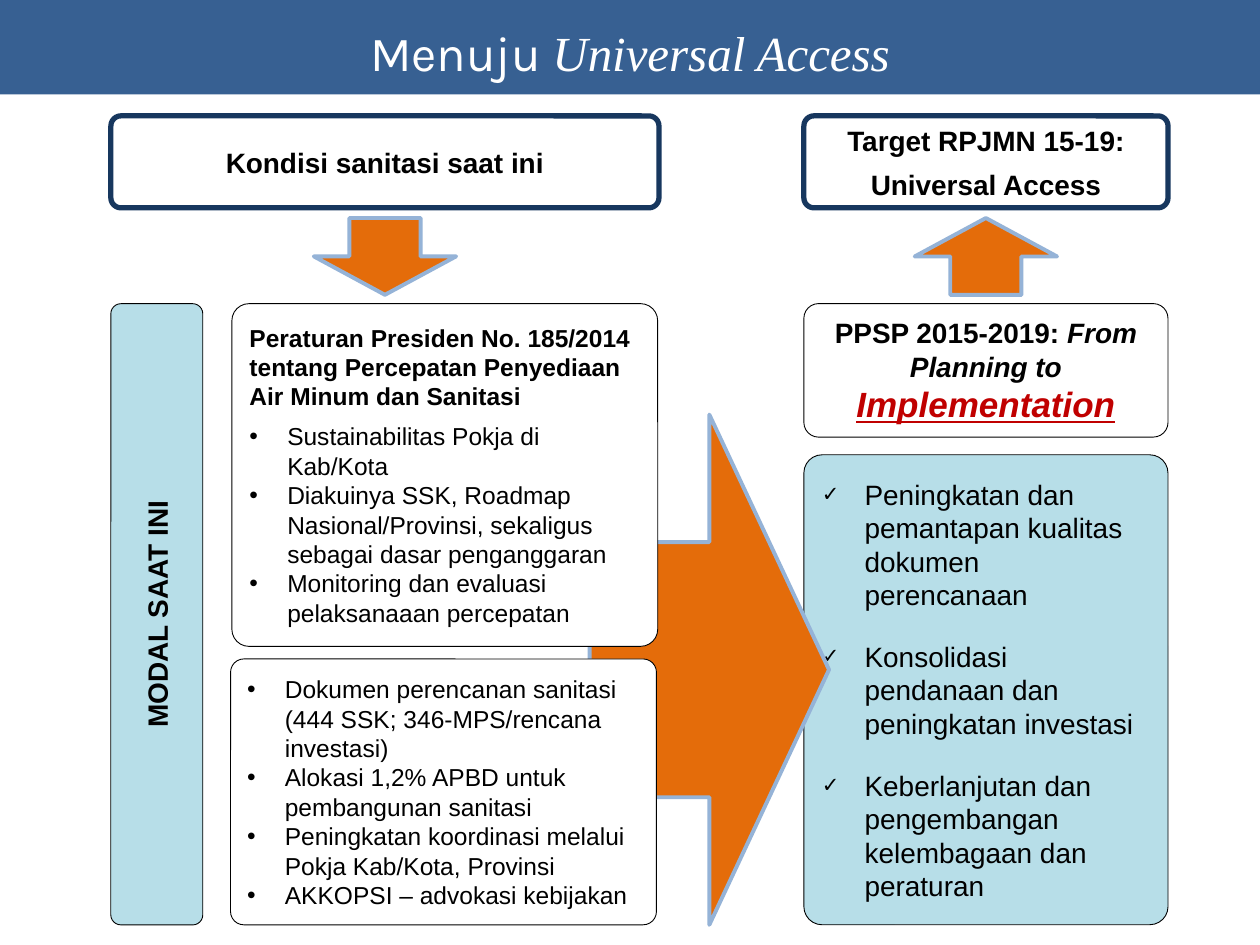
from lxml import etree
from pptx import Presentation
from pptx import util as u
from pptx.dml.color import RGBColor
from pptx.enum import shapes, text
from pptx.oxml import ns, parse_xml

COLORS = {
    "white": "FFFFFF", "black": "000000", "band": "376092", "navy": "17375E",
    "pale": "B7DEE8", "orange": "E46C0A", "edge": "95B3D7", "red": "C00000",
}
RIGHT_LEFT, RIGHT_WIDTH = 6.38, 2.89
HEADER_TOP, HEADER_HEIGHT = 0.92, 0.73
CONTENT_TOP = 2.41


def rgb(name):
    return RGBColor.from_string(COLORS[name])


def paint(shape, fill, line=None, width=0.5):
    shape.shadow.inherit = False
    shape.fill.solid()
    shape.fill.fore_color.rgb = rgb(fill)
    if line:
        shape.line.color.rgb = rgb(line)
        shape.line.width = u.Pt(width)
    else:
        shape.line.fill.background()


def add_block(slide, kind, box, fill, line=None, width=0.5, turn=0, corner=None):
    block = slide.shapes.add_shape(kind, *map(u.Inches, box))
    paint(block, fill, line, width)
    block.rotation = turn
    if corner is not None:
        block.adjustments[0] = corner
    return block


def add_arrow(slide, box, turn=0):
    add_block(slide, shapes.MSO_SHAPE.RIGHT_ARROW, box, "orange", "edge", 2.25, turn)


def place(slide, holder, box):
    """Move a placeholder to its box and to the front."""
    holder.left, holder.top, holder.width, holder.height = map(u.Inches, box)
    slide.shapes._spTree.append(holder._element)
    frame = holder.text_frame
    frame.auto_size = text.MSO_AUTO_SIZE.NONE
    frame.word_wrap = True
    frame.vertical_anchor = text.MSO_ANCHOR.MIDDLE
    return frame


def add_run(paragraph, words, size, color="black", font="Arial",
            bold=False, italic=False, underline=False):
    run = paragraph.add_run()
    run.text = words
    run.font.size = u.Pt(size)
    run.font.name = font
    run.font.color.rgb = rgb(color)
    run.font.bold, run.font.italic, run.font.underline = bold, italic, underline


def next_paragraph(frame):
    first = frame.paragraphs[0]
    return first if not first.runs else frame.add_paragraph()


def set_bullet(paragraph, mark, indent, percent=100):
    props = paragraph._p.get_or_add_pPr()
    props.set("marL", str(u.Inches(indent)))
    props.set("indent", str(-u.Inches(indent)))
    if not mark:
        etree.SubElement(props, ns.qn("a:buNone"))
        return
    etree.SubElement(props, ns.qn("a:buSzPct"), val=str(percent * 1000))
    etree.SubElement(props, ns.qn("a:buFont"), typeface="Arial")
    etree.SubElement(props, ns.qn("a:buChar"), char=mark)


def add_label(slide, box, lines, fill="white", line="black", width=0.5, turn=0):
    """Rounded box with centred lines; each line is a list of (words, format)."""
    label = add_block(slide, shapes.MSO_SHAPE.ROUNDED_RECTANGLE, box,
                      fill, line, width, turn, corner=0.11)
    frame = label.text_frame
    frame.word_wrap = True
    frame.vertical_anchor = text.MSO_ANCHOR.MIDDLE
    for runs in lines:
        paragraph = next_paragraph(frame)
        paragraph.alignment = text.PP_ALIGN.CENTER
        paragraph.space_after = u.Pt(6)
        for words, style in runs:
            add_run(paragraph, words, **{"size": 16, "bold": True, **style})


def fill_list(slide, holder, box, items, fill="white", corner=0.05, heading=None,
              size=14, mark="•", indent=0.3, percent=100, gap=0):
    """Turn a body placeholder into a rounded card with a bulleted list."""
    frame = place(slide, holder, box)
    holder._element.spPr.find(ns.qn("a:xfrm")).addnext(parse_xml(
        f'<a:prstGeom {ns.nsdecls("a")} prst="roundRect"><a:avLst>'
        f'<a:gd name="adj" fmla="val {round(corner * 100000)}"/>'
        '</a:avLst></a:prstGeom>'))
    paint(holder, fill, "black")
    if heading:
        paragraph = next_paragraph(frame)
        set_bullet(paragraph, None, 0)
        paragraph.space_before, paragraph.space_after = u.Pt(0), u.Pt(6)
        add_run(paragraph, heading, size, bold=True)
    for number, item in enumerate(items):
        paragraph = next_paragraph(frame)
        set_bullet(paragraph, mark, indent, percent)
        paragraph.alignment = text.PP_ALIGN.LEFT
        paragraph.space_before = u.Pt(gap if number else 0)
        add_run(paragraph, item, size)


def add_title(slide):
    add_block(slide, shapes.MSO_SHAPE.RECTANGLE, (0, -0.02, 10, 0.77), "band")
    frame = place(slide, slide.shapes.title, (0.73, 0.07, 8.54, 0.68))
    frame.margin_left = frame.margin_right = frame.margin_top = frame.margin_bottom = 0
    paragraph = frame.paragraphs[0]
    paragraph.alignment = text.PP_ALIGN.CENTER
    add_run(paragraph, "Menuju ", 28, "white", "Karla")
    add_run(paragraph, "Universal Access", 28, "white", "Times New Roman", italic=True)


def main():
    deck = Presentation()
    deck.slide_width, deck.slide_height = u.Inches(10), u.Inches(7.5)
    slide = deck.slides.add_slide(deck.slide_layouts[4])
    bodies = {h.placeholder_format.idx: h for h in slide.placeholders}

    # Strategy list, with the large arrow pointing into it
    fill_list(slide, bodies[4], (RIGHT_LEFT, 3.61, RIGHT_WIDTH, 3.73), [
        "Peningkatan dan pemantapan kualitas dokumen perencanaan",
        "Konsolidasi pendanaan dan peningkatan investasi",
        "Keberlanjutan dan pengembangan kelembagaan dan peraturan",
    ], fill="pale", size=16, mark="✓", indent=0.34, percent=75, gap=16)
    add_arrow(slide, (4.68, 3.29, 1.9, 4.05))

    add_title(slide)

    # Current assets: regulation and planning lists
    fill_list(slide, bodies[2], (1.84, CONTENT_TOP, 3.38, 2.72), [
        "Sustainabilitas Pokja di Kab/Kota",
        "Diakuinya SSK, Roadmap Nasional/Provinsi, sekaligus sebagai dasar penganggaran",
        "Monitoring dan evaluasi pelaksanaaan percepatan",
    ], heading="Peraturan Presiden No. 185/2014 tentang Percepatan Penyediaan "
               "Air Minum dan Sanitasi")
    fill_list(slide, bodies[3], (1.83, 5.23, 3.38, 2.11), [
        "Dokumen perencanan sanitasi (444 SSK; 346-MPS/rencana investasi)",
        "Alokasi 1,2% APBD untuk pembangunan sanitasi",
        "Peningkatan koordinasi melalui Pokja Kab/Kota, Provinsi",
        "AKKOPSI – advokasi kebijakan",
    ])

    # Programme, arrows and side label
    add_label(slide, (RIGHT_LEFT, CONTENT_TOP, RIGHT_WIDTH, 1.06), [[
        ("PPSP 2015-2019: ", {}),
        ("From Planning to ", {"italic": True}),
        ("Implementation", {"size": 20, "color": "red", "italic": True,
                            "underline": True}),
    ]])
    for left, turn in ((7.52, 270), (2.75, 90)):
        add_arrow(slide, (left, 1.47, 0.61, 1.13), turn)
    add_label(slide, (-1.22, 4.51, 4.93, 0.73), [[("MODAL SAAT INI", {})]],
              fill="pale", turn=270)

    # Column headers
    for left, width, lines in (
        (RIGHT_LEFT, RIGHT_WIDTH, ["Target RPJMN 15-19:", "Universal Access"]),
        (0.88, 4.35, ["Kondisi sanitasi saat ini"]),
    ):
        add_label(slide, (left, HEADER_TOP, width, HEADER_HEIGHT),
                  [[(line, {})] for line in lines], line="navy", width=3)

    # Unused placeholder
    slide.shapes._spTree.remove(bodies[1]._element)
    deck.save("out.pptx")


if __name__ == "__main__":
    main()
